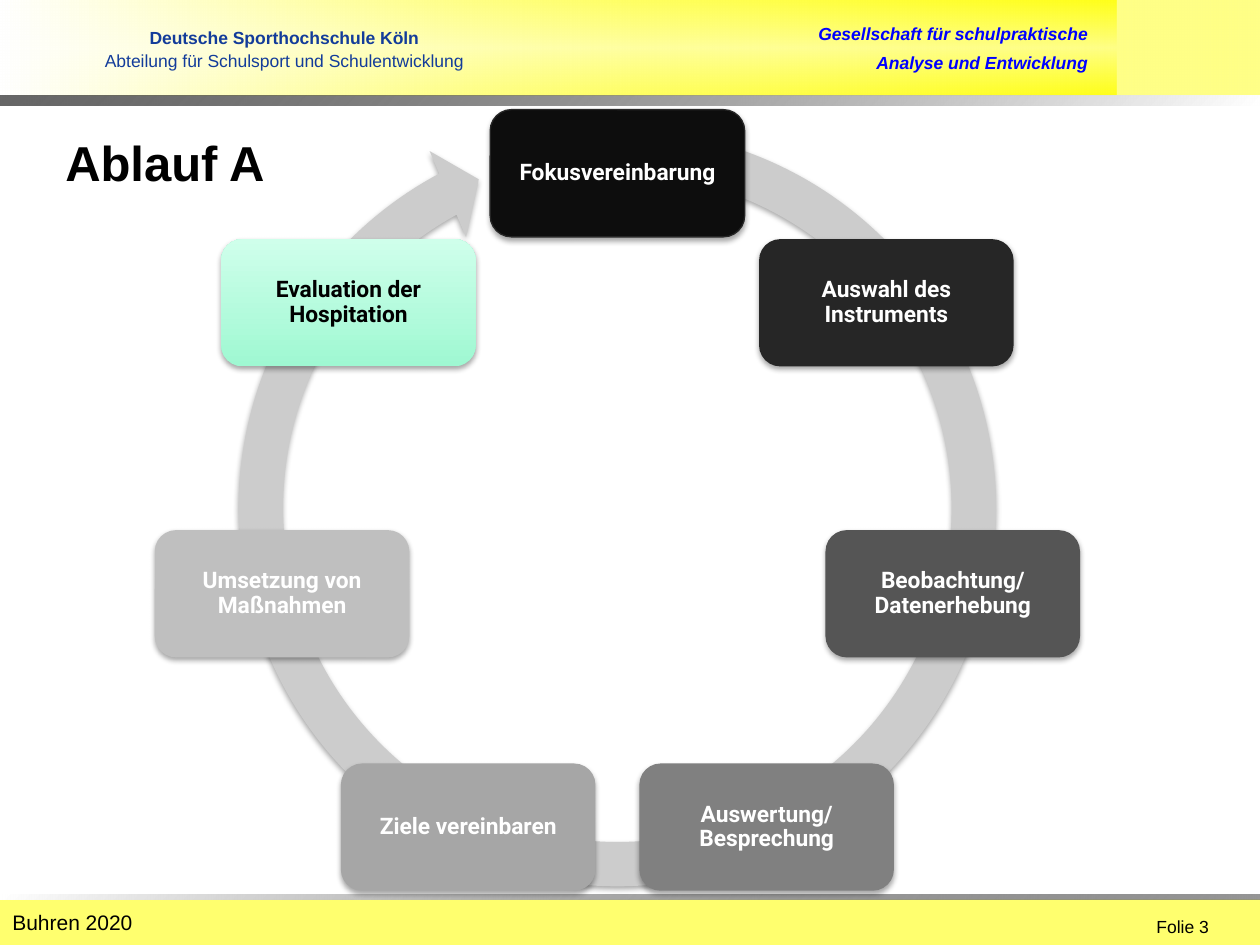
from math import cos, radians, sin

from lxml.etree import SubElement
from pptx import Presentation
from pptx.dml.color import RGBColor
from pptx.enum.shapes import MSO_SHAPE
from pptx.enum.text import MSO_ANCHOR, PP_ALIGN
from pptx.oxml.ns import qn
from pptx.util import Inches, Pt

BLACK = RGBColor(0x00, 0x00, 0x00)
WHITE = RGBColor(0xFF, 0xFF, 0xFF)
YELLOW = RGBColor(0xFF, 0xFF, 0x00)
BLUE = RGBColor(0x00, 0x00, 0xFF)
NAVY = RGBColor(0x13, 0x3C, 0x9A)
RING = RGBColor(0xCC, 0xCC, 0xCC)
EDGE = RGBColor(0x26, 0x26, 0x26)
MINT = RGBColor(0x9F, 0xF8, 0xD2)
PALE_MINT = RGBColor(0xCF, 0xFF, 0xEB)

deck = Presentation()
deck.slide_width, deck.slide_height = Inches(10), Inches(7.5)
page = deck.slides.add_slide(deck.slide_layouts[6])
COLUMN = deck.slide_width / 100
ROW = deck.slide_height / 75


def add_block(kind, at, stops, angle=0, shadow=False):
    """Add a shape at (left, top, width, height) in grid units.

    stops holds (position, colour, opacity) in percent; one stop is a solid fill.
    """
    left, top, width, height = at
    block = page.shapes.add_shape(kind, int(left * COLUMN), int(top * ROW),
                                  int(width * COLUMN), int(height * ROW))
    block.line.fill.background()
    block.shadow.inherit = False
    properties = block._element.spPr
    if len(stops) == 1:
        block.fill.solid()
        block.fill.fore_color.rgb = stops[0][1]
        colours = [properties.find(qn("a:solidFill"))[0]]
    else:
        block.fill.gradient()
        gradient = properties.find(qn("a:gradFill"))
        gradient.find(qn("a:lin")).set("ang", str(angle * 60000))
        stop_list = gradient.find(qn("a:gsLst"))
        stop_list[:] = []
        colours = []
        for position, colour, _ in stops:
            stop = SubElement(stop_list, qn("a:gs"), pos=str(position * 1000))
            colours.append(SubElement(stop, qn("a:srgbClr"), val=str(colour)))
    for element, (_, _, opacity) in zip(colours, stops):
        if opacity < 100:
            SubElement(element, qn("a:alpha"), val=str(opacity * 1000))
    if shadow:
        outer = SubElement(properties.find(qn("a:effectLst")), qn("a:outerShdw"),
                           blurRad=str(Pt(3.1)), dist=str(Pt(1.8)),
                           dir="5400000", rotWithShape="0")
        tint = SubElement(outer, qn("a:srgbClr"), val=str(BLACK))
        SubElement(tint, qn("a:alpha"), val="35000")
    return block


def write(box, text, size, colour, bold=False, align=PP_ALIGN.LEFT, font="Arial"):
    box.text_frame.word_wrap = True
    box.text_frame.text = text
    for para in box.text_frame.paragraphs:
        para.alignment = align
        for span in para.runs:
            span.font.name, span.font.size = font, Pt(size)
            span.font.bold, span.font.color.rgb = bold, colour
    return box.text_frame


# Header and footer bands
bands = [
    ((0, 0, 88.6, 7.6), [(0, YELLOW, 91), (50, WHITE, 100), (100, YELLOW, 91)], 90, 0),
    ((0, 0, 100, 7.6), [(0, YELLOW, 47), (100, WHITE, 100)], 0, 180),
    ((0, 71.4, 100, 3.6), [(0, YELLOW, 57)], 0, 0),
    ((0, 7.6, 100, 0.8), [(0, BLACK, 60), (100, WHITE, 100)], 45, 0),
    ((0, 71, 100, 0.4), [(0, BLACK, 41), (100, WHITE, 100)], 45, 180),
]
for at, stops, angle, rotation in bands:
    add_block(MSO_SHAPE.RECTANGLE, at, stops, angle).rotation = rotation

# Header, footer and title text
labels = [
    ((57.3, 1.3, 30, 2.7), "Gesellschaft für schulpraktische", 10, BLUE, True, PP_ALIGN.RIGHT),
    ((57.3, 3.6, 30, 2.7), "Analyse und Entwicklung", 10, BLUE, True, PP_ALIGN.RIGHT),
    ((90.8, 72.2, 9.2, 2.7), "Folie 3", 10, BLACK, False, PP_ALIGN.LEFT),
    ((0, 71.7, 51.7, 3), "Buhren 2020", 12, BLACK, False, PP_ALIGN.LEFT),
    ((4.2, 1.5, 36.7, 5), "Deutsche Sporthochschule Köln\n"
     "Abteilung für Schulsport und Schulentwicklung", 10, NAVY, True, PP_ALIGN.CENTER),
]
for (left, top, width, height), text, size, colour, bold, align in labels:
    box = page.shapes.add_textbox(int(left * COLUMN), int(top * ROW),
                                  int(width * COLUMN), int(height * ROW))
    frame = write(box, text, size, colour, bold, align)
    for para in frame.paragraphs:
        para.runs[0].font.italic = colour == BLUE
        if colour == NAVY:
            para.line_spacing = Pt(13)
frame.paragraphs[1].runs[0].font.bold = False

title = add_block(MSO_SHAPE.RECTANGLE, (4.2, 10, 91.3, 5.7), [(0, WHITE, 100)])
write(title, "Ablauf A", 28, BLACK, True).vertical_anchor = MSO_ANCHOR.TOP

# Cycle: ring arrow with the steps at equal angles, clockwise from the top
ring = add_block(MSO_SHAPE.CIRCULAR_ARROW, (17, 8.3, 64, 64), [(0, RING, 100)], shadow=True)
for index, value in enumerate((0.055, 3.307, 144.965, 169.613, 0.058)):
    ring.adjustments[index] = value

CENTER_X, CENTER_Y, RADIUS = 49, 41.05, 27.3
STEP_WIDTH, STEP_HEIGHT = 20.2, 10.1
steps = [
    ("Fokusvereinbarung", RGBColor(0x0D, 0x0D, 0x0D)),
    ("Auswahl des Instruments", EDGE),
    ("Beobachtung/ Datenerhebung", RGBColor(0x55, 0x55, 0x55)),
    ("Auswertung/Besprechung", RGBColor(0x80, 0x80, 0x80)),
    ("Ziele vereinbaren", RGBColor(0xA6, 0xA6, 0xA6)),
    ("Umsetzung von Maßnahmen", RGBColor(0xBF, 0xBF, 0xBF)),
    ("Evaluation der Hospitation", MINT),
]
for index, (text, colour) in enumerate(steps):
    turn = radians(360 / len(steps) * index)
    at = (CENTER_X + RADIUS * sin(turn) - STEP_WIDTH / 2,
          CENTER_Y - RADIUS * cos(turn) - STEP_HEIGHT / 2, STEP_WIDTH, STEP_HEIGHT)
    stops = [(0, colour, 100)]
    if colour == MINT:
        stops.append((100, PALE_MINT, 100))
    step = add_block(MSO_SHAPE.ROUNDED_RECTANGLE, at, stops, 270, shadow=True)
    if index == 0:
        step.line.color.rgb, step.line.width = EDGE, Pt(0.75)
    frame = write(step, text, 13, BLACK if colour == MINT else WHITE, True,
                  PP_ALIGN.CENTER, "Roboto")
    frame.vertical_anchor = MSO_ANCHOR.MIDDLE
    frame.paragraphs[0].line_spacing = 0.9

deck.save("out.pptx")
